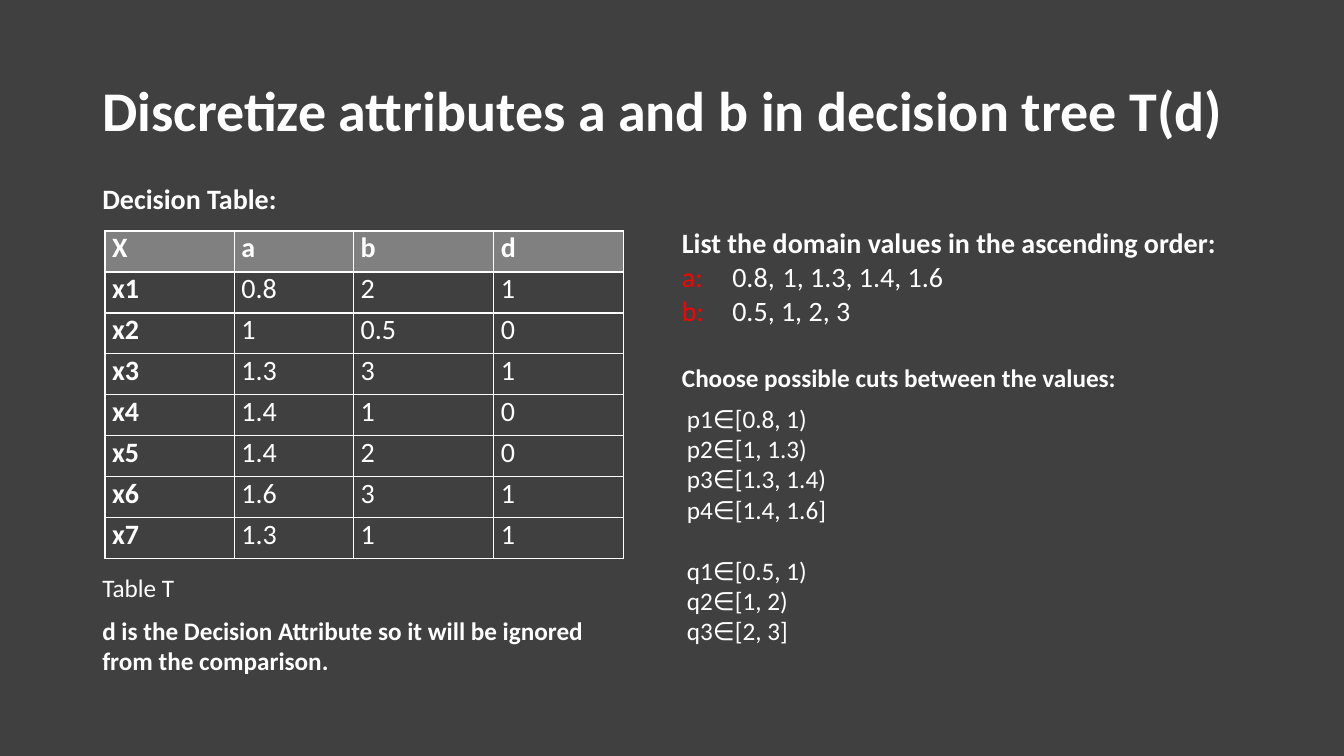
from lxml import etree
from pptx import Presentation
from pptx.dml.color import RGBColor
from pptx.enum.text import MSO_ANCHOR, PP_ALIGN
from pptx.oxml.ns import qn
from pptx.util import Inches, Pt

LEFT, TOP, MIDDLE = PP_ALIGN.LEFT, MSO_ANCHOR.TOP, MSO_ANCHOR.MIDDLE
COLORS = {"background": "404040", "header": "808080", "text": "FFFFFF", "label": "FF0000"}

prs = Presentation()
prs.slide_width, prs.slide_height = Inches(13.333), Inches(7.5)
U = prs.slide_height / 90


def add_text(tf, text, size=18, bold=False, color="text", label="", before=0, spacing=1.0, tabs=()):
    p = tf.paragraphs[0]
    if p.runs:
        p = tf.add_paragraph()
    p.alignment, p.line_spacing, p.space_before = LEFT, spacing, Pt(before)
    if tabs:
        tab_list = etree.SubElement(p._p.get_or_add_pPr(), qn("a:tabLst"))
        for pos in tabs:
            etree.SubElement(tab_list, qn("a:tab"), pos=str(int(pos * U)), algn="l")
    for part, name in ((label, "label"), (text, color)):
        if part:
            r = p.add_run()
            r.text = part
            r.font.name, r.font.size, r.font.bold = "Calibri", Pt(size), bold
            r.font.color.rgb = RGBColor.from_string(COLORS[name])


def add_box(left, top, width, height):
    box = s.shapes.add_textbox(*(int(v * U) for v in (left, top, width, height)))
    box.text_frame.word_wrap = True
    return box.text_frame


s = prs.slides.add_slide(prs.slide_layouts[5])
s.background.fill.solid()
s.background.fill.fore_color.rgb = RGBColor.from_string(COLORS["background"])

title = s.shapes.title
title.left, title.top, title.width, title.height = (int(v * U) for v in (11, 4.8, 138, 17.4))
title.text_frame.vertical_anchor = MIDDLE
add_text(title.text_frame, "Discretize attributes a and b in decision tree T(d)", size=40, bold=True, spacing=0.9)

rows = [
    ("X", "a", "b", "d"),
    ("x1", "0.8", "2", "1"),
    ("x2", "1", "0.5", "0"),
    ("x3", "1.3", "3", "1"),
    ("x4", "1.4", "1", "0"),
    ("x5", "1.4", "2", "0"),
    ("x6", "1.6", "3", "1"),
    ("x7", "1.3", "1", "1"),
]
col_widths, row_height = (15.4, 14.2, 16.7, 15.4), 4.88
frame = (12.5, 27.5, sum(col_widths), row_height * len(rows))
table = s.shapes.add_table(len(rows), len(col_widths), *(int(v * U) for v in frame)).table
for col, width in zip(table.columns, col_widths):
    col.width = int(width * U)
for i, row in enumerate(rows):
    table.rows[i].height = int(row_height * U)
    for j, value in enumerate(row):
        cell = table.cell(i, j)
        cell.margin_left = cell.margin_right = Inches(0.07)
        cell.margin_top = cell.margin_bottom = 0
        cell.vertical_anchor = TOP
        add_text(cell.text_frame, value, size=20, bold=i == 0 or j == 0)
        tc_pr = cell._tc.get_or_add_tcPr()
        for side in ("lnL", "lnR", "lnT", "lnB"):
            line = etree.SubElement(tc_pr, qn(f"a:{side}"), w=str(Pt(1)))
            fill = etree.SubElement(line, qn("a:solidFill"))
            etree.SubElement(fill, qn("a:srgbClr"), val=COLORS["text"])
        cell.fill.solid()
        cell.fill.fore_color.rgb = RGBColor.from_string(COLORS["background" if i else "header"])

tf = add_box(80.6, 47.4, 34.8, 30.2)
for cut in ("p1∈[0.8, 1)", "p2∈[1, 1.3)", "p3∈[1.3, 1.4)", "p4∈[1.4, 1.6]"):
    add_text(tf, cut)
for k, cut in enumerate(("q1∈[0.5, 1)", "q2∈[1, 2)", "q3∈[2, 3]")):
    add_text(tf, cut, before=0 if k else 22)

add_text(add_box(11, 21, 43.7, 5.3), "Decision Table:", size=20, bold=True)

tf = add_box(80, 26.3, 71, 13.3)
add_text(tf, "List the domain values in the ascending order:", size=20, bold=True)
for label, values in (("a: \t", "0.8, \t1, 1.3, 1.4, 1.6"), ("b: \t", "0.5, 1, 2, 3")):
    add_text(tf, values, size=20, label=label, tabs=(6, 12))

tf = add_box(11, 67.6, 61.6, 13.7)
add_text(tf, "Table T")
add_text(tf, "d is the Decision Attribute so it will be ignored from the comparison.", bold=True, before=8.5)

add_text(add_box(80, 42.6, 80, 4.8), "Choose possible cuts between the values:", bold=True)

prs.save("out.pptx")
